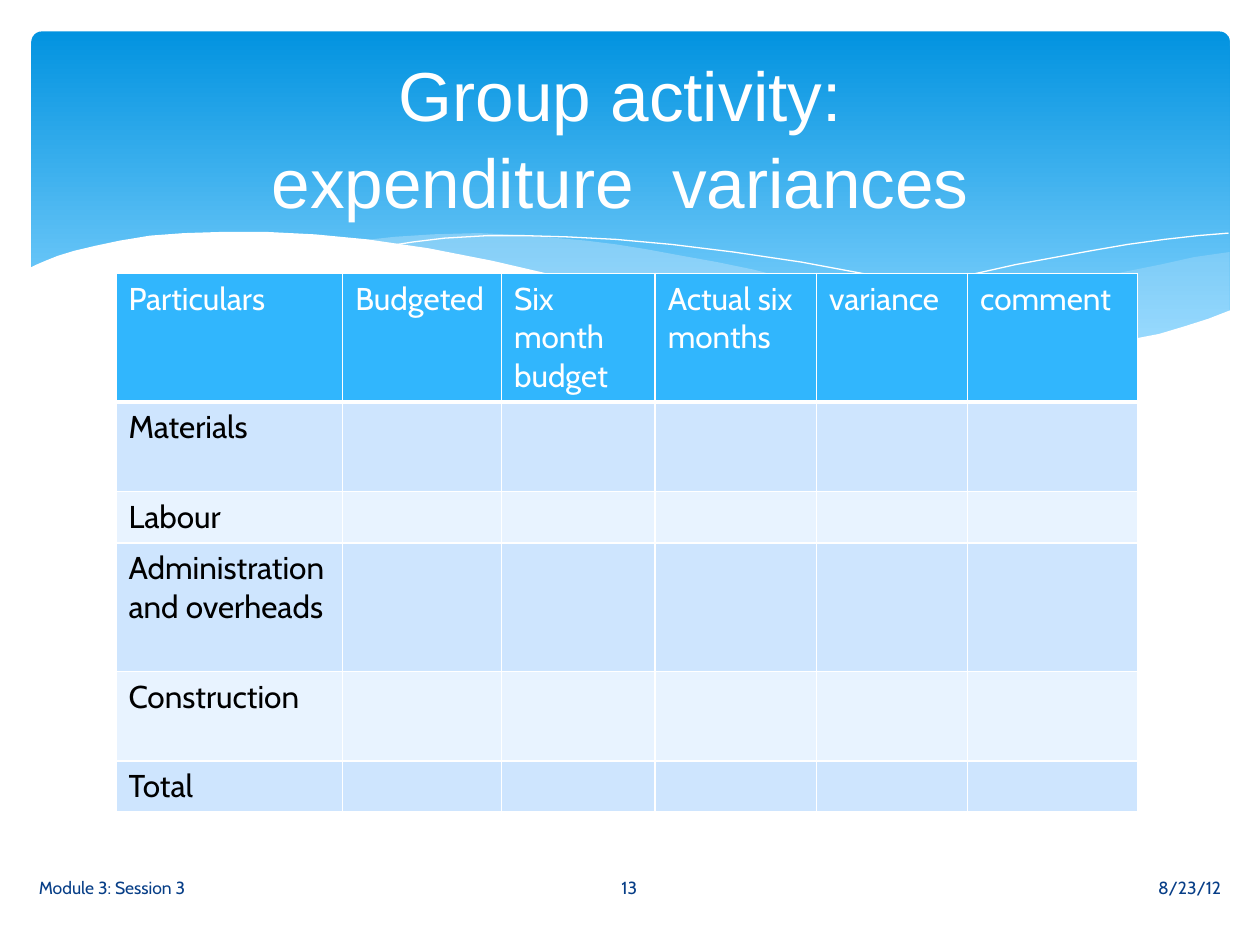
from lxml import etree
from pptx import Presentation
from pptx.dml.color import RGBColor
from pptx.enum.shapes import MSO_SHAPE
from pptx.enum.text import MSO_ANCHOR, MSO_AUTO_SIZE, PP_ALIGN
from pptx.oxml.ns import qn
from pptx.util import Inches, Pt

ROUNDED = MSO_SHAPE.ROUNDED_RECTANGLE
MIDDLE = MSO_ANCHOR.MIDDLE
NO_AUTOFIT = MSO_AUTO_SIZE.NONE
LEFT, CENTER, RIGHT = PP_ALIGN.LEFT, PP_ALIGN.CENTER, PP_ALIGN.RIGHT

COLORS = {
    "sky_top": "0293E0",
    "sky_bottom": "83D3FE",
    "wave": "C6E7FC",
    "white": "FFFFFF",
    "header": "31B6FD",
    "band_dark": "CEE5FE",
    "band_light": "E8F3FF",
    "body": "000000",
    "footer": "073E87",
}

prs = Presentation()
prs.slide_width, prs.slide_height = Inches(10), Inches(7.5)
GRID = prs.slide_width // 1000


def on_grid(*cells):
    return [cell * GRID for cell in cells]


def style_text(paragraph, size, font_name, color, align):
    paragraph.alignment = align
    for run in paragraph.runs:
        run.font.size = Pt(size)
        run.font.name = font_name
        run.font.color.rgb = RGBColor.from_string(COLORS[color])


slide = prs.slides.add_slide(prs.slide_layouts[5])
shapes = slide.shapes

sky = shapes.add_shape(ROUNDED, *on_grid(25, 25, 951, 270))
sky.adjustments[0] = 0.03
sky.shadow.inherit = False
sky.line.fill.background()
sky.fill.gradient()
sky.fill.gradient_angle = 270
for stop, position, shade in zip(sky.fill.gradient_stops, (0, 0.9), ("sky_top", "sky_bottom")):
    stop.position = position
    stop.color.rgb = RGBColor.from_string(COLORS[shade])

right_wave = [
    (976, 200), (948, 204), (921, 210), (891, 216), (861, 223), (805, 237), (753, 248),
    (706, 257), (661, 265), (691, 269), (719, 272), (745, 275), (769, 277), (803, 278),
    (835, 277), (863, 275), (889, 272), (913, 267), (935, 262), (949, 257), (963, 252),
    (976, 247),
]
middle_wave = [
    (893, 273), (866, 269), (837, 265), (807, 260), (775, 254), (741, 247), (706, 240),
    (668, 231), (629, 222), (598, 214), (569, 208), (541, 203), (514, 198), (489, 194),
    (465, 191), (442, 189), (420, 187), (380, 185), (344, 186), (313, 188), (286, 191),
    (323, 196), (362, 203), (404, 211), (449, 222), (491, 232), (530, 240), (566, 248),
    (601, 255), (634, 261), (665, 266), (695, 270), (722, 274), (748, 276), (773, 277),
    (807, 278), (838, 278), (867, 276),
]
left_crest = [
    (309, 195), (328, 192), (353, 189), (387, 187), (416, 187), (450, 188), (489, 190),
    (533, 194), (582, 200), (636, 208), (695, 219), (760, 233), (831, 251), (907, 272),
]
right_crest = [
    (613, 257), (653, 246), (695, 235), (748, 223), (806, 210), (866, 199), (895, 194),
    (924, 190), (951, 187), (975, 185),
]
white_wave = [
    (977, 246), (959, 253), (940, 259), (920, 265), (899, 269), (875, 273), (850, 275),
    (823, 277), (793, 276), (761, 275), (726, 272), (688, 268), (648, 262), (603, 254),
    (555, 245), (503, 233), (447, 220), (391, 207), (340, 197), (292, 190), (250, 186),
    (211, 184), (177, 184), (146, 185), (119, 187), (95, 191), (76, 195), (59, 199),
    (46, 203), (36, 207), (29, 210), (23, 213), (23, 329), (977, 329),
]
waves = [
    (right_wave, "wave", 29),
    (middle_wave, "wave", 40),
    (left_crest, None, None),
    (right_crest, None, None),
    (white_wave, "white", 100),
]
for points, color, opacity in waves:
    outline = shapes.build_freeform(*points[0], scale=GRID)
    outline.add_line_segments(points[1:], close=color is not None)
    wave = outline.convert_to_shape()
    wave.shadow.inherit = False
    if color is None:
        wave.fill.background()
        wave.line.color.rgb = RGBColor.from_string(COLORS["white"])
        wave.line.width = Pt(0)
        continue
    wave.line.fill.background()
    wave.fill.solid()
    wave.fill.fore_color.rgb = RGBColor.from_string(COLORS[color])
    wave_color = wave.element.spPr.find(qn("a:solidFill"))[0]
    etree.SubElement(wave_color, qn("a:alpha"), val=str(opacity * 1000))

headings = ["Particulars", "Budgeted", "Six month budget", "Actual six months", "variance", "comment"]
particulars = ["Materials", "Labour", "Administration and overheads", "Construction", "Total"]
column_widths = [180, 126, 122, 128, 120, 135]
row_heights = [102, 71, 41, 102, 71, 40]

variances = shapes.add_table(
    len(row_heights), len(column_widths),
    *on_grid(92, 217, sum(column_widths), sum(row_heights)),
).table
for column, width in zip(variances.columns, column_widths):
    column.width = width * GRID
for row, height in zip(variances.rows, row_heights):
    row.height = height * GRID
for column, heading in enumerate(headings):
    variances.cell(0, column).text_frame.text = heading
for row, particular in enumerate(particulars, 1):
    variances.cell(row, 0).text_frame.text = particular

for row in range(len(row_heights)):
    band = "header" if row == 0 else "band_dark" if row % 2 else "band_light"
    for column in range(len(column_widths)):
        cell = variances.cell(row, column)
        cell_properties = cell._tc.get_or_add_tcPr()
        for side in ("lnL", "lnR", "lnT", "lnB"):
            heavy = (row, side) in ((0, "lnB"), (1, "lnT"))
            border = etree.SubElement(cell_properties, qn(f"a:{side}"), w=str(Pt(3 if heavy else 1)))
            border_fill = etree.SubElement(border, qn("a:solidFill"))
            etree.SubElement(border_fill, qn("a:srgbClr"), val=COLORS["white"])
        cell.fill.solid()
        cell.fill.fore_color.rgb = RGBColor.from_string(COLORS[band])
        style_text(cell.text_frame.paragraphs[0], 18, "Cabin", "body" if row else "white", LEFT)
        for run in cell.text_frame.paragraphs[0].runs:
            run.font.bold = False

title = shapes.title
title.left, title.top, title.width, title.height = on_grid(50, 39, 900, 137)
title.text_frame.text = "Group activity: \vexpenditure  variances "
title.text_frame.auto_size = NO_AUTOFIT
title.text_frame.vertical_anchor = MIDDLE
title.text_frame.paragraphs[0].line_spacing = 1.05
style_text(title.text_frame.paragraphs[0], 39.6, "Arial", "white", CENTER)
shapes.element.append(title.element)

footers = [
    ("8/23/12", 565, 414, RIGHT),
    ("Module 3: Session 3", 21, 414, LEFT),
    ("13", 436, 127, CENTER),
]
for wording, left, width, align in footers:
    footer = shapes.add_textbox(*on_grid(left, 684, width, 40)).text_frame
    footer.word_wrap = True
    footer.vertical_anchor = MIDDLE
    footer.text = wording
    style_text(footer.paragraphs[0], 10, "Cabin", "footer", align)

prs.save("out.pptx")
